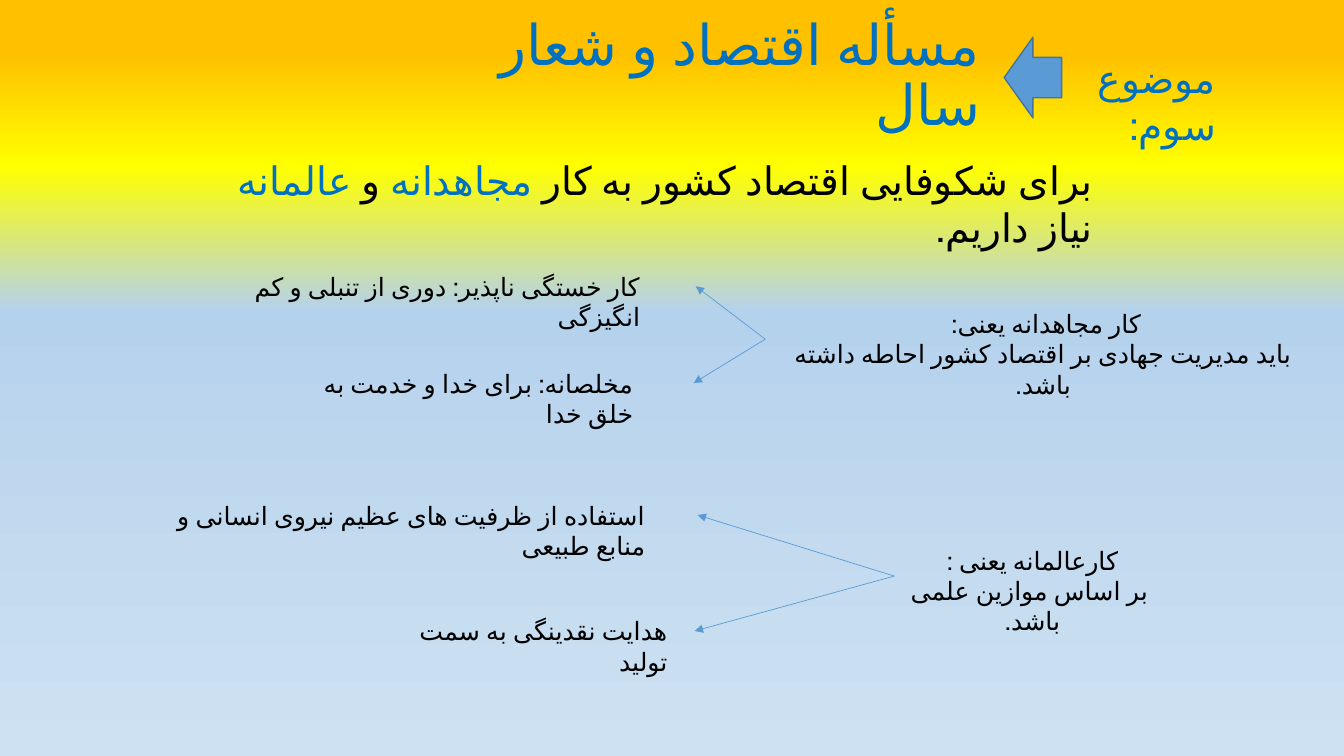
from lxml.etree import SubElement as Sub
from pptx import Presentation
from pptx.dml.color import RGBColor
from pptx.enum.shapes import MSO_CONNECTOR as Link, MSO_SHAPE as Shape
from pptx.enum.text import MSO_ANCHOR as Anchor, MSO_AUTO_SIZE as Auto, PP_ALIGN as Align
from pptx.oxml.ns import qn
from pptx.util import Inches, Pt

FONT = "Calibri"
BLUE, BLACK, SKY, EDGE = "0070C0", "000000", "5B9BD5", "43739E"
STOPS = [(7, "FFC000"), (22, "FFFF00"), (41, "B5D2EC"), (100, "CEE1F2")]

# A text is a list of paragraphs, each a list of (words, colour) runs.
TITLE = [[("مسأله اقتصاد و شعار سال", BLUE)]]
TOPIC = [[("موضوع سوم:", BLUE)]]
LEAD = [[
    ("برای شکوفایی اقتصاد کشور به کار ", BLACK),
    ("مجاهدانه", BLUE),
    (" و ", BLACK),
    ("عالمانه", BLUE),
    (" نیاز داریم. ", BLACK),
]]

# Each branch: hub box, hub lines, then its leaves as (box, right inset, words).
BRANCHES = [
    ((7.59, 3.01, 5.51, 0.71),
     ["کار مجاهدانه یعنی: ", "باید مدیریت جهادی بر اقتصاد کشور احاطه داشته باشد."],
     [((2.43, 2.64, 4.47, 0.4), 0.55, "کار خستگی ناپذیر: دوری از تنبلی و کم انگیزگی "),
      ((3.12, 3.6, 3.76, 0.4), 0.6, "مخلصانه: برای خدا و خدمت به خلق خدا")]),
    ((8.87, 5.36, 2.74, 0.71),
     ["کارعالمانه یعنی :", " بر اساس موازین علمی باشد."],
     [((1.67, 4.91, 5.25, 0.4), 0.52,
       "استفاده از ظرفیت های عظیم نیروی انسانی و منابع طبیعی"),
      ((4.07, 6.06, 2.82, 0.4), 0.27, "هدایت نقدینگی به سمت تولید")]),
]


def color(code):
    return RGBColor.from_string(code)


def paint(slide):
    """Fill the background with the top-down gradient."""
    slide.background.fill.gradient()
    grad = next(slide.element.iter(qn("a:gradFill")))
    for part in list(grad):
        grad.remove(part)
    stops = Sub(grad, qn("a:gsLst"))
    for pos, code in STOPS:
        stop = Sub(stops, qn("a:gs"), pos=str(pos * 1000))
        Sub(stop, qn("a:srgbClr"), val=code)
    Sub(grad, qn("a:lin"), ang="5400000", scaled="1")


def write(slide, box, paras, size, align=Align.RIGHT, inset=None):
    """Add a right-to-left text box; an inset moves its text off the right side."""
    shape = slide.shapes.add_textbox(*map(Inches, box))
    frame = shape.text_frame
    frame.word_wrap = True
    frame.auto_size = Auto.NONE
    if inset:
        frame.margin_left, frame.margin_right = 0, Inches(inset)
    for i, runs in enumerate(paras):
        para = frame.add_paragraph() if i else frame.paragraphs[0]
        para.alignment = align
        para._p.get_or_add_pPr().set("rtl", "1")
        for words, code in runs:
            run = para.add_run()
            run.text = words
            run.font.size = Pt(size)
            run.font.name = FONT
            run.font.color.rgb = color(code)
            run.font._element.set("lang", "fa-IR")
    return shape


def join(slide, hub, leaf):
    """Draw an arrow from the hub's left side to the leaf's right side."""
    line = slide.shapes.add_connector(Link.STRAIGHT, 0, 0, 0, 0)
    line.begin_connect(hub, 1)
    line.end_connect(leaf, 3)
    line.line.color.rgb = color(SKY)
    line.line.width = Pt(0.5)
    Sub(line.line._get_or_add_ln(), qn("a:tailEnd"), type="triangle")
    Sub(line._element.spPr, qn("a:effectLst"))


def main():
    deck = Presentation()
    deck.slide_width, deck.slide_height = Inches(13.33), Inches(7.5)
    slide = deck.slides.add_slide(deck.slide_layouts[6])
    paint(slide)

    title = write(slide, (4.67, 0.3, 5.15, 0.94), TITLE, 40)
    title.text_frame.vertical_anchor = Anchor.MIDDLE
    title.text_frame.paragraphs[0].line_spacing = 0.9
    write(slide, (10.81, 0.49, 1.99, 0.57), TOPIC, 28, inset=0.74)

    arrow = slide.shapes.add_shape(
        Shape.LEFT_ARROW, *map(Inches, (9.96, 0.37, 0.57, 0.8)))
    arrow.shadow.inherit = False
    arrow.fill.solid()
    arrow.fill.fore_color.rgb = color(SKY)
    arrow.line.color.rgb = color(EDGE)
    arrow.line.width = Pt(1)

    write(slide, (2.28, 1.5, 9.2, 0.57), LEAD, 28, inset=0.64)

    for box, lines, leaves in BRANCHES:
        hub = write(slide, box, [[(words, BLACK)] for words in lines], 18, Align.CENTER)
        for spot, inset, words in leaves:
            leaf = write(slide, spot, [[(words, BLACK)]], 18, inset=inset)
            join(slide, hub, leaf)

    deck.save("out.pptx")


if __name__ == "__main__":
    main()
